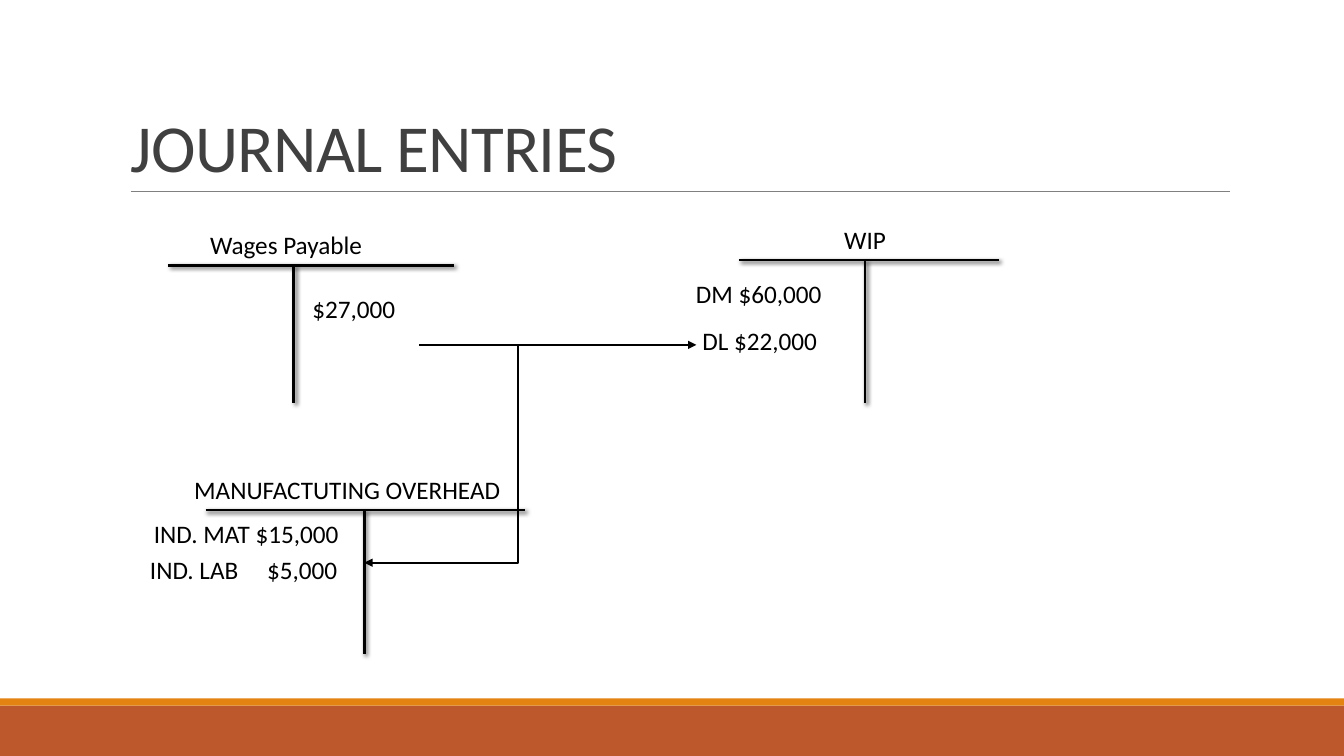
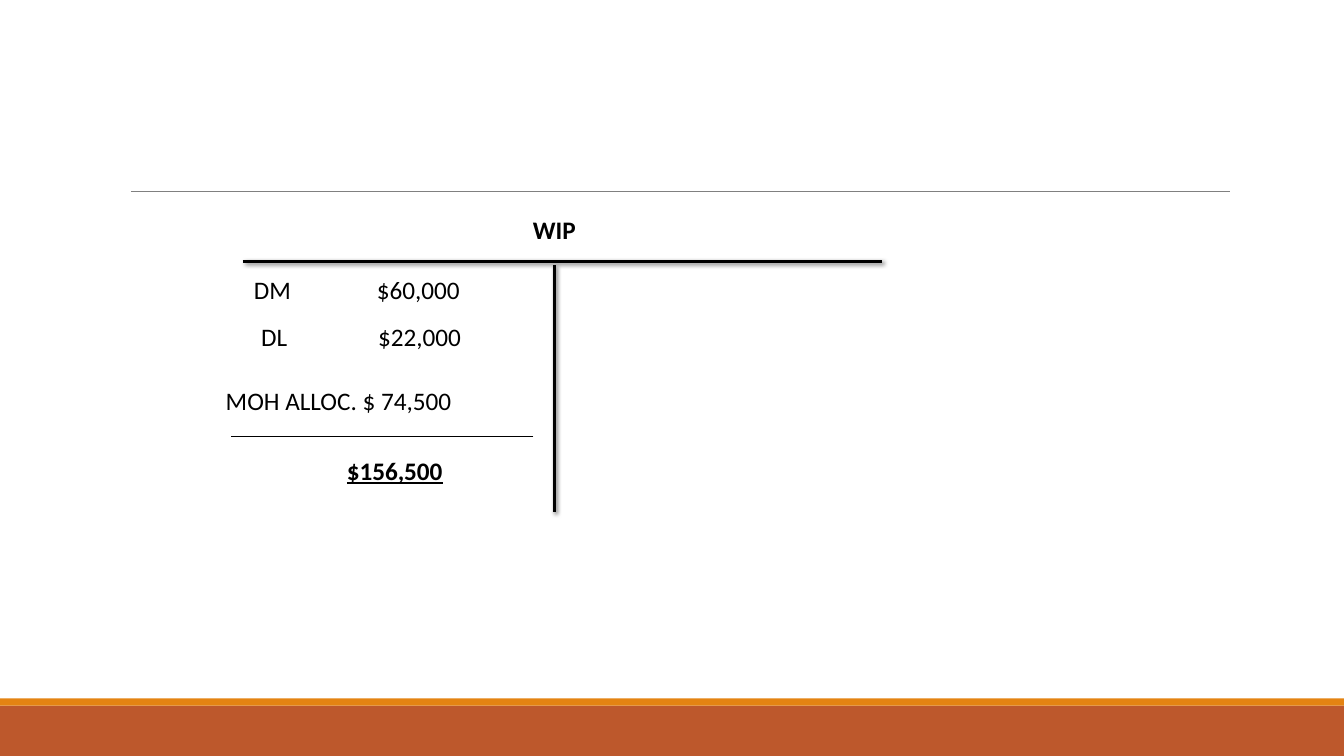
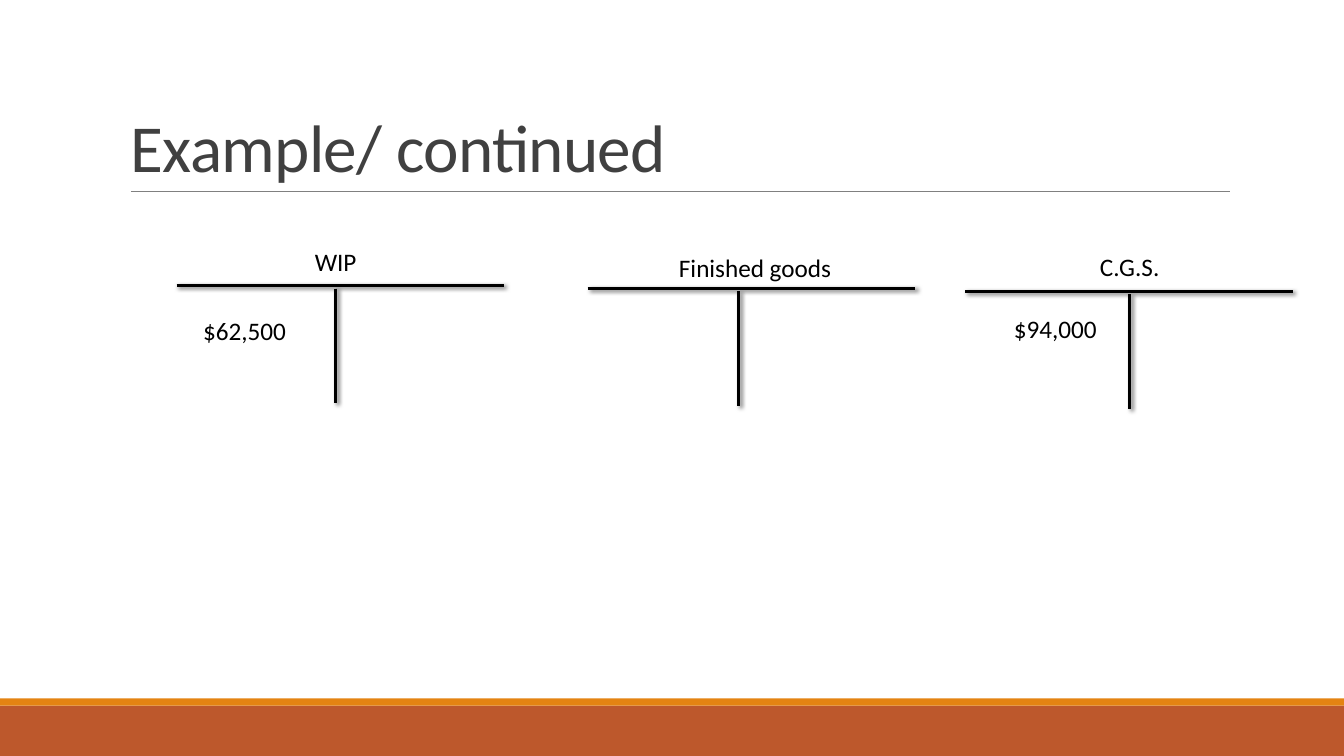
from dataclasses import dataclass

import pptx
import pptx.dml.color
import pptx.enum.shapes
import pptx.enum.text
import pptx.oxml
import pptx.oxml.ns
import pptx.util
from lxml import etree

Cm = pptx.util.Cm
Pt = pptx.util.Pt
RGB = pptx.dml.color.RGBColor.from_string
qn = pptx.oxml.ns.qn
ALIGN = pptx.enum.text.PP_ALIGN
ANCHOR = pptx.enum.text.MSO_ANCHOR
CONNECTOR = pptx.enum.shapes.MSO_CONNECTOR
RECT = pptx.enum.shapes.MSO_SHAPE.RECTANGLE


@dataclass(frozen=True)
class Theme:
    font: str = "Calibri"
    title_size: int = 48
    body_size: int = 18
    ink: str = "000000"
    title: str = "404040"
    rule: str = "808080"
    band: str = "BD582C"
    strip: str = "E48312"
    account_line: float = 2
    arrow_line: float = 1.25
    inset: float = 0.25
    row: float = 1.03


class Deck:
    def __init__(self, theme):
        self.theme = theme
        self.prs = pptx.Presentation()
        self.prs.slide_width, self.prs.slide_height = Cm(33.87), Cm(19.05)
        self.slide = None

    def new_slide(self, title=None):
        t = self.theme
        self.slide = self.prs.slides.add_slide(self.prs.slide_layouts[6])
        self.band(17.78, 1.27, t.band)
        self.band(17.6, 0.18, t.strip)
        self.line(3.3, 4.82, 30.99, 4.82, width=0.5, color=t.rule)
        if title:
            p = self.text(title, 3.05, 0.79, 27.94, 4.04, size=t.title_size,
                          color=t.title, anchor=ANCHOR.BOTTOM)
            p.line_spacing = 0.85
            p.font._rPr.set("spc", "-50")

    def band(self, top, height, color):
        sp = self.slide.shapes.add_shape(RECT, 0, Cm(top), self.prs.slide_width, Cm(height))
        sp.shadow.inherit = False
        sp.fill.solid()
        sp.fill.fore_color.rgb = RGB(color)
        sp.line.fill.background()

    def text(self, text, left, top, width, height=None, size=None, color=None,
             align=ALIGN.LEFT, anchor=ANCHOR.TOP, bold=None, underline=None, tab=None):
        """Add a one-paragraph box; tab is a stop in cm from the text edge."""
        t = self.theme
        sp = self.slide.shapes.add_textbox(Cm(left), Cm(top), Cm(width), Cm(height or t.row))
        tf = sp.text_frame
        tf.word_wrap = True
        tf.vertical_anchor = anchor
        p = tf.paragraphs[0]
        p.text = text
        p.alignment = align
        if tab:
            stops = etree.SubElement(p._p.get_or_add_pPr(), qn("a:tabLst"))
            etree.SubElement(stops, qn("a:tab"), pos=str(Cm(tab)), algn="l")
        p.font.name = t.font
        p.font.size = Pt(size or t.body_size)
        p.font.color.rgb = RGB(color or t.ink)
        p.font.bold = bold
        p.font.underline = underline
        return p

    def entry(self, text, x, top, width=4, **style):
        """Add an account entry whose text starts at x."""
        self.text(text, x - self.theme.inset, top, width, **style)

    def line(self, x1, y1, x2, y2, width=1, color=None, shadow=False, arrow=False,
             kind=CONNECTOR.STRAIGHT):
        c = self.slide.shapes.add_connector(kind, Cm(x1), Cm(y1), Cm(x2), Cm(y2))
        c.line.width = Pt(width)
        c.line.color.rgb = RGB(color or self.theme.ink)
        if arrow:
            etree.SubElement(c.line._get_or_add_ln(), qn("a:tailEnd"), type="triangle")
        effects = etree.SubElement(c._element.spPr, qn("a:effectLst"))
        if shadow:
            outer = etree.SubElement(effects, qn("a:outerShdw"), blurRad=str(Pt(3)),
                                     dist=str(Pt(2)), dir="2700000", rotWithShape="0")
            ink = etree.SubElement(outer, qn("a:srgbClr"), val=self.theme.ink)
            etree.SubElement(ink, qn("a:alpha"), val="60000")

    def arrow(self, x1, y1, x2, y2, kind=CONNECTOR.STRAIGHT):
        self.line(x1, y1, x2, y2, self.theme.arrow_line, arrow=True, kind=kind)

    def t_account(self, name, left, right, top, stem, bottom, stem_gap=0,
                  name_gap=1.02, name_at=None, bold=None):
        """Draw a T with its name centred at name_at, or else over the stem."""
        width = self.theme.account_line
        self.line(left, top, right, top, width, shadow=True)
        self.line(stem, top + stem_gap, stem, bottom, width, shadow=True)
        name_width = 8.6
        self.text(name, (name_at or stem) - name_width / 2, top - name_gap, name_width,
                  align=ALIGN.CENTER, bold=bold)


def journal_entries(deck):
    deck.new_slide("JOURNAL ENTRIES")
    deck.t_account("Wages Payable", 4.23, 11.43, 6.68, 7.4, 10.16, name_at=7.21)
    deck.t_account("WIP", 18.62, 25.18, 6.55, 21.8, 10.16)
    deck.t_account("MANUFACTUTING OVERHEAD", 5.18, 13.22, 12.85, 9.18, 16.48, name_at=8.75)
    deck.entry("$27,000", 7.87, 7.26)
    deck.entry("DM $60,000", 17.54, 6.88)
    deck.entry("DL $22,000", 17.7, 8.08)
    deck.entry("IND. MAT $15,000", 3.88, 12.93, 5.5)
    deck.entry("IND. LAB\t$5,000", 3.78, 13.84, 5.5, tab=2.95)
    deck.arrow(10.57, 8.69, 17.55, 8.69)
    deck.arrow(16.92, 8.69, 9.18, 14.18, CONNECTOR.ELBOW)


def wip_total(deck):
    deck.new_slide()
    deck.t_account("WIP", 6.12, 22.23, 6.58, 13.97, 12.9, stem_gap=0.1, name_gap=1.3, bold=True)
    deck.entry("DM\t$60,000", 6.4, 6.78, 6.5, tab=3.1)
    deck.entry("DL\t$22,000", 6.58, 7.98, 6.5, tab=2.95)
    deck.entry("MOH ALLOC. $ 74,500", 5.69, 9.58, 6.68)
    deck.line(13.44, 11, 5.82, 11)
    deck.entry("$156,500", 8.74, 11.35, bold=True, underline=True)


def example_continued(deck):
    deck.new_slide("Example/ continued")
    for name, left, top, stem, name_gap, name_at in (
        ("WIP", 4.45, 7.19, 8.46, 1.12, None),
        ("Finished goods", 14.81, 7.26, 18.62, 1.02, 19.03),
        ("C.G.S.", 24.33, 7.34, 28.47, 1.12, None),
    ):
        deck.t_account(name, left, left + 8.26, top, stem, top + 2.96, stem_gap=0.08,
                       name_gap=name_gap, name_at=name_at)
    deck.entry("$62,500", 5.12, 7.82)
    deck.entry("$94,000", 25.55, 7.77)


def main():
    deck = Deck(Theme())
    journal_entries(deck)
    wip_total(deck)
    example_continued(deck)
    deck.prs.save("out.pptx")


if __name__ == "__main__":
    main()
